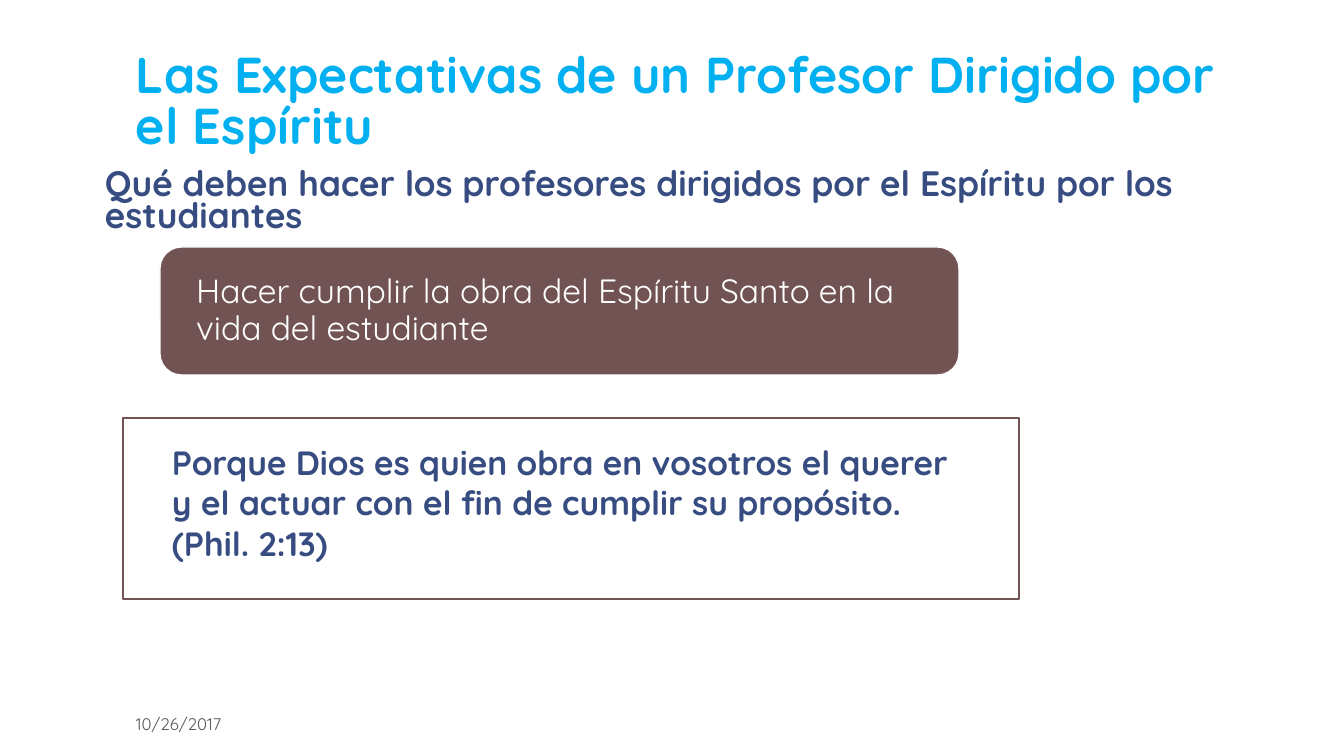
from dataclasses import dataclass

from pptx import Presentation
from pptx.dml.color import RGBColor
from pptx.enum.shapes import MSO_SHAPE
from pptx.enum.text import MSO_ANCHOR, PP_ALIGN
from pptx.util import Emu, Pt

TOP, MIDDLE, BOTTOM = MSO_ANCHOR.TOP, MSO_ANCHOR.MIDDLE, MSO_ANCHOR.BOTTOM
LEFT = PP_ALIGN.LEFT
RECTANGLE, ROUNDED = MSO_SHAPE.RECTANGLE, MSO_SHAPE.ROUNDED_RECTANGLE


@dataclass(frozen=True)
class Theme:
    font: str = "Quicksand"
    sky: str = "00B0F0"
    navy: str = "374C81"
    brown: str = "725353"
    white: str = "FFFFFF"
    gray: str = "595959"
    title_size: float = 36
    subtitle_size: float = 25.2
    body_size: float = 24
    date_size: float = 12
    line_width: float = 1


THEME = Theme()
PAGE_SIZE = (1344, 756)
EMU_PER_PX = 914400 / 100.8
MARGINS = (13, 7)

TEXTS = [
    dict(text="Las Expectativas de un Profesor Dirigido por el Espíritu",
         area=(123, 8, 1120, 154), size=THEME.title_size, color=THEME.sky,
         bold=True, spacing=0.85, anchor=BOTTOM),
    dict(text="Qué deben hacer los profesores dirigidos por el Espíritu por los estudiantes",
         area=(92, 164, 1155, 79), size=THEME.subtitle_size, color=THEME.navy,
         bold=True, spacing=0.75, anchor=TOP),
    dict(text="10/26/2017",
         area=(123, 706, 302, 35), size=THEME.date_size, color=THEME.gray,
         bold=False, spacing=1.0, anchor=BOTTOM),
]

PANELS = [
    dict(text="Porque Dios es quien obra en vosotros el querer y el actuar "
              "con el fin de cumplir su propósito. (Phil. 2:13)",
         area=(123, 418, 896, 181), size=THEME.body_size, color=THEME.navy,
         bold=True, spacing=1.0, anchor=TOP, margins=(49, 24),
         outline=RECTANGLE, fill=THEME.white, line=THEME.brown),
    dict(text="Hacer cumplir la obra del Espíritu Santo en la vida del estudiante",
         area=(160, 247, 799, 128), size=THEME.body_size, color=THEME.white,
         bold=False, spacing=0.9, anchor=MIDDLE, margins=(30, 6),
         outline=ROUNDED, fill=THEME.brown, line=THEME.white),
]


def px(length):
    return Emu(round(length * EMU_PER_PX))


def rgb(color):
    return RGBColor.from_string(color)


def write(shape, item):
    frame = shape.text_frame
    frame.word_wrap = True
    frame.vertical_anchor = item["anchor"]
    side, edge = map(px, item.get("margins", MARGINS))
    frame.margin_left = frame.margin_right = side
    frame.margin_top = frame.margin_bottom = edge
    para = frame.paragraphs[0]
    para.alignment = LEFT
    para.line_spacing = item["spacing"]
    span = para.add_run()
    span.text = item["text"]
    span.font.name = THEME.font
    span.font.size = Pt(item["size"])
    span.font.bold = item["bold"]
    span.font.color.rgb = rgb(item["color"])


def add_text(page, item):
    write(page.shapes.add_textbox(*map(px, item["area"])), item)


def add_panel(page, item):
    panel = page.shapes.add_shape(item["outline"], *map(px, item["area"]))
    panel.shadow.inherit = False
    panel.fill.solid()
    panel.fill.fore_color.rgb = rgb(item["fill"])
    panel.line.color.rgb = rgb(item["line"])
    panel.line.width = Pt(THEME.line_width)
    write(panel, item)


def main():
    deck = Presentation()
    deck.slide_width, deck.slide_height = map(px, PAGE_SIZE)
    page = deck.slides.add_slide(deck.slide_layouts[6])
    for item in TEXTS:
        add_text(page, item)
    for item in PANELS:
        add_panel(page, item)
    deck.save("out.pptx")


if __name__ == "__main__":
    main()
